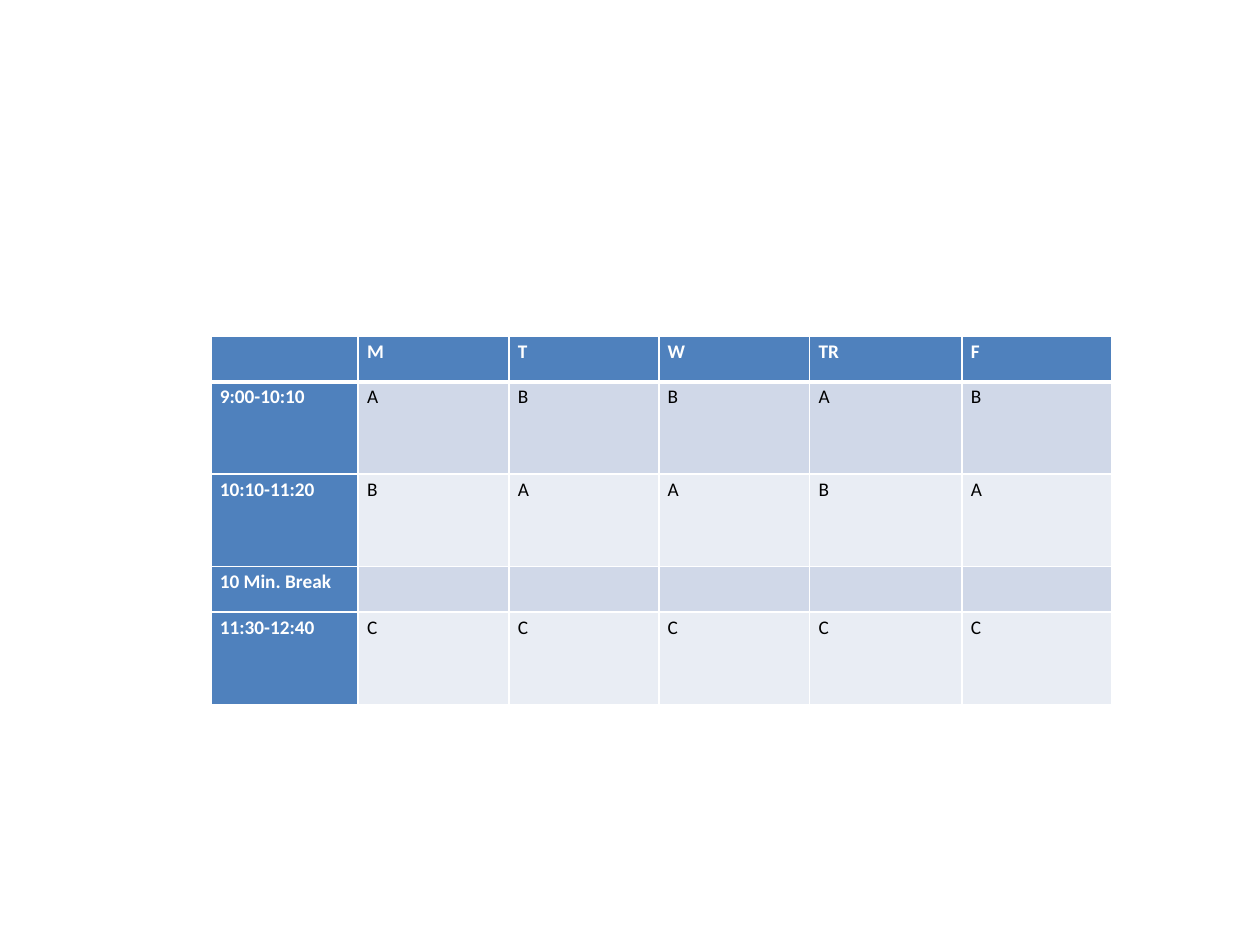
from lxml import etree
from pptx import Presentation
from pptx.dml.color import RGBColor
from pptx.oxml.ns import qn
from pptx.util import Cm, Pt

BLANK_LAYOUT = 6
SCHEDULE = [
    ["", "M", "T", "W", "TR", "F"],
    ["9:00-10:10", "A", "B", "B", "A", "B"],
    ["10:10-11:20", "B", "A", "A", "B", "A"],
    ["10 Min. Break", "", "", "", "", ""],
    ["11:30-12:40", "C", "C", "C", "C", "C"],
]
TABLE_LEFT, TABLE_TOP = 4.25, 6.78
COLUMN_WIDTHS = [2.97, 3.04, 3.02, 3.04, 3.07, 3.02]
ROW_HEIGHTS = [0.92, 1.86, 1.86, 0.92, 1.86]
HEADING_FILL, BAND_FILLS = "4F81BD", ["E9EDF4", "D0D8E8"]
WHITE, BLACK = "FFFFFF", "000000"
MARGINS = {"margin_left": Cm(0.18), "margin_right": Cm(0.18),
           "margin_top": 0, "margin_bottom": 0}
FONT = {"name": "Calibri", "size": Pt(11)}


def color(hex_value):
    return RGBColor.from_string(hex_value)


def set_attributes(target, values):
    for name, value in values.items():
        setattr(target, name, value)


def add_borders(cell, widths):
    """Draw white borders; widths maps the side letters L, R, T, B to points."""
    properties = cell._tc.get_or_add_tcPr()
    for side, width in widths.items():
        line = etree.SubElement(properties, qn(f"a:ln{side}"), w=str(Pt(width)))
        fill = etree.SubElement(line, qn("a:solidFill"))
        etree.SubElement(fill, qn("a:srgbClr"), val=WHITE)


def format_cell(cell, text, row, column):
    is_heading = row == 0 or column == 0
    set_attributes(cell, MARGINS)
    add_borders(cell, {"L": 1, "R": 1, "T": 3 if row == 1 else 1,
                       "B": 3 if row == 0 else 1})
    cell.fill.solid()
    cell.fill.fore_color.rgb = color(HEADING_FILL if is_heading else BAND_FILLS[row % 2])
    if text:
        paragraph = cell.text_frame.paragraphs[0]
        paragraph.line_spacing = 1.15
        run = paragraph.add_run()
        run.text = text
        set_attributes(run.font, {**FONT, "bold": is_heading})
        run.font.color.rgb = color(WHITE if is_heading else BLACK)


def main():
    presentation = Presentation()
    presentation.slide_width, presentation.slide_height = Cm(25.4), Cm(19.05)
    slide = presentation.slides.add_slide(presentation.slide_layouts[BLANK_LAYOUT])
    table = slide.shapes.add_table(
        len(SCHEDULE), len(COLUMN_WIDTHS), Cm(TABLE_LEFT), Cm(TABLE_TOP),
        Cm(sum(COLUMN_WIDTHS)), Cm(sum(ROW_HEIGHTS))).table
    for column, width in zip(table.columns, COLUMN_WIDTHS):
        column.width = Cm(width)
    for row, height in zip(table.rows, ROW_HEIGHTS):
        row.height = Cm(height)
    for row_index, texts in enumerate(SCHEDULE):
        for column_index, text in enumerate(texts):
            format_cell(table.cell(row_index, column_index), text, row_index, column_index)
    presentation.save("out.pptx")


if __name__ == "__main__":
    main()
